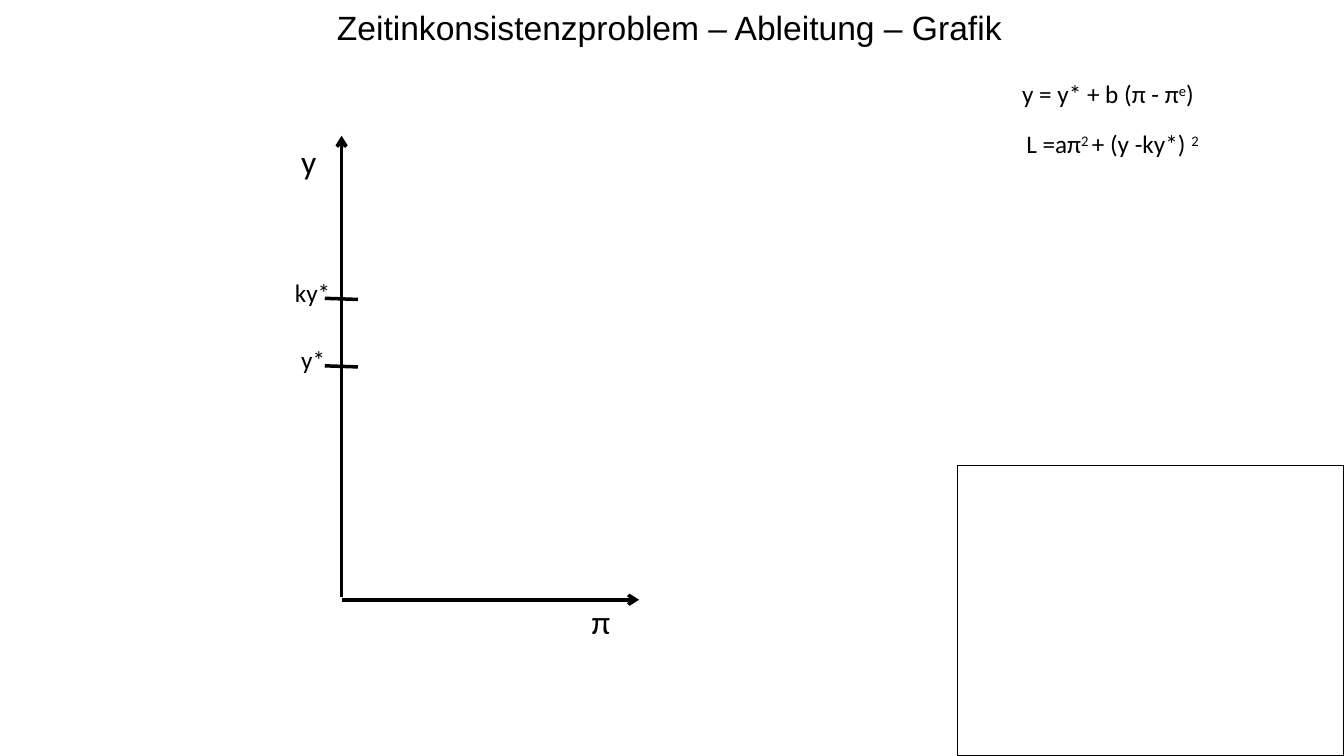
from pptx import Presentation
from pptx.dml.color import RGBColor
from pptx.enum.shapes import MSO_CONNECTOR, MSO_SHAPE
from pptx.enum.text import MSO_ANCHOR, MSO_AUTO_SIZE, PP_ALIGN
from pptx.oxml.ns import qn
from pptx.util import Pt
from lxml import etree

STRAIGHT = MSO_CONNECTOR.STRAIGHT
RECTANGLE = MSO_SHAPE.RECTANGLE
MIDDLE = MSO_ANCHOR.MIDDLE
CENTER = PP_ALIGN.CENTER
FIT_SHAPE = MSO_AUTO_SIZE.SHAPE_TO_FIT_TEXT
TITLE_ONLY = 5
BLACK = "000000"


def color(hex_value):
    return RGBColor.from_string(hex_value)


def style_font(font, **formats):
    font.color.rgb = color(BLACK)
    for name, value in formats.items():
        setattr(font, name, value)


def add_label(page, box, spans, size, line_spacing=None):
    """Write one line of (text, is_superscript) spans."""
    label = page.shapes.add_textbox(*map(Pt, box))
    frame = label.text_frame
    frame.word_wrap = False
    frame.auto_size = FIT_SHAPE
    para = frame.paragraphs[0]
    if line_spacing:
        para.line_spacing = line_spacing
    for text, is_superscript in spans:
        span = para.add_run()
        span.text = text
        style_font(span.font, name="Calibri", size=Pt(size))
        if is_superscript:
            span.font._element.set("baseline", "30000")


def add_line(page, start, end, arrow=False):
    connector = page.shapes.add_connector(STRAIGHT, *map(Pt, (*start, *end)))
    connector.line.color.rgb = color(BLACK)
    connector.line.width = Pt(2.5)
    if arrow:
        etree.SubElement(connector.line._get_or_add_ln(), qn("a:tailEnd"), type="arrow")
    etree.SubElement(connector._element.spPr, qn("a:effectLst"))


def add_title(page, box, text):
    title = page.shapes.title
    title.left, title.top, title.width, title.height = map(Pt, box)
    frame = title.text_frame
    frame.text = text
    frame.vertical_anchor = MIDDLE
    frame.paragraphs[0].alignment = CENTER
    style_font(frame.paragraphs[0].runs[0].font, name="Arial", size=Pt(24))


def add_diagram(page, box):
    left, top, width, height = box
    bottom = top + height

    # Axes
    add_line(page, (left, bottom - 2), (left, top), arrow=True)
    add_line(page, (left, bottom), (left + width, bottom), arrow=True)
    add_label(page, (left - 36, top, 25, 36), [("y", False)], 24)
    add_label(page, (left + 171.5, bottom - 3, 28, 36), [("π", False)], 24)

    # Output levels marked on the vertical axis
    levels = [("ky*", 116.5, 40.5, 40), ("y*", 164.7, 36, 32)]
    for text, offset, indent, label_width in levels:
        y = top + offset
        add_line(page, (left + 11.7, y + 0.4), (left - 12, y - 0.4))
        add_label(page, (left - indent, y - 19.3, label_width, 29), [(text, False)], 18)


def add_equations(page, box):
    left, top, width, height = box
    supply = [("y = y* + b (π - π", False), ("e", True), (")", False)]
    loss = [("L =aπ", False), ("2 ", True), ("+ (y -ky*) ", False), ("2", True)]
    add_label(page, (left, top, width, 29), supply, 18)
    add_label(page, (left + 3, top + height - 30, width - 3, 30), loss, 18, 1.1)


def add_frame(page, box):
    frame = page.shapes.add_shape(RECTANGLE, *map(Pt, box))
    frame.shadow.inherit = False
    frame.fill.background()
    frame.line.color.rgb = color(BLACK)
    frame.line.width = Pt(1)


def main():
    deck = Presentation()
    deck.slide_width, deck.slide_height = Pt(960), Pt(540)
    page = deck.slides.add_slide(deck.slide_layouts[TITLE_ONLY])
    add_title(page, (165.6, 1.5, 625, 35), "Zeitinkonsistenzproblem – Ableitung – Grafik")
    add_diagram(page, (244, 97, 212.5, 331.4))
    add_frame(page, (684, 332.6, 276, 207.4))
    add_equations(page, (723, 52.6, 144, 63.4))
    deck.save("out.pptx")


if __name__ == "__main__":
    main()
